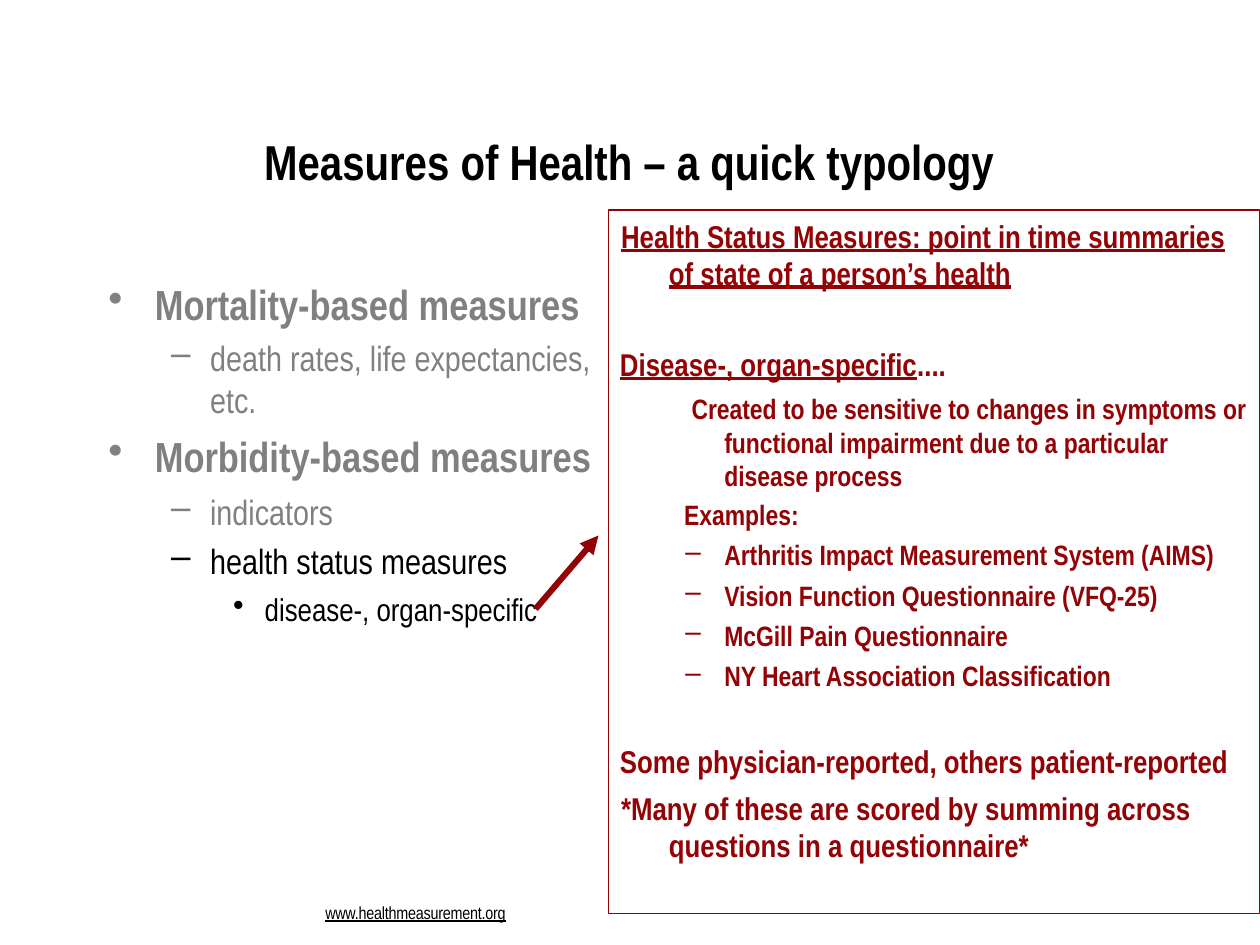
from lxml import etree
from pptx import Presentation
from pptx.dml.color import RGBColor
from pptx.enum import shapes, text
from pptx.oxml import ns
from pptx.util import Pt

RED = RGBColor(0x93, 0x03, 0x06)
GREY = RGBColor(0x80, 0x80, 0x80)
BLACK = RGBColor(0, 0, 0)
FACE = "Arial Narrow"

HEAD = dict(size=24, bold=True, color=GREY, left=28, hang=-26.6, mark="•")
SUB = dict(size=20, color=GREY, left=59.6, hang=-22.3, mark="–", level=1)
LEAF = dict(size=18, color=BLACK, left=90.8, hang=-18, mark="•", level=2)
BODY = dict(size=18, bold=True, color=RED)
WRAP = dict(BODY, left=28, hang=-27.4, line=21)
NOTE = dict(BODY, size=16, left=59.6, hang=-18.7, line=19)
ITEM = dict(BODY, size=16, left=59.6, hang=-22.3, mark="–", before=3.9)


def add_text(slide, box, rows, top=0, wrap=True):
    """Fill a text box with rows of (list of (words, underline), format)."""
    frame = slide.shapes.add_textbox(*map(Pt, box)).text_frame
    edges = dict(margin_left=0, margin_right=0, margin_bottom=0,
                 margin_top=Pt(top), word_wrap=wrap,
                 vertical_anchor=text.MSO_ANCHOR.TOP)
    for name, value in edges.items():
        setattr(frame, name, value)
    for spot, (runs, form) in enumerate(rows):
        para = frame.add_paragraph() if spot else frame.paragraphs[0]
        add_row(para, runs, form)


def add_row(para, runs, form):
    """Write the runs of one paragraph in the given format."""
    props = para._p.get_or_add_pPr()
    props.set("marL", str(Pt(form.get("left", 0))))
    props.set("indent", str(Pt(form.get("hang", 0))))
    if "mark" in form:
        mark = etree.SubElement(props, ns.qn("a:buChar"))
        mark.set("char", form["mark"])
    else:
        etree.SubElement(props, ns.qn("a:buNone"))
    para.level = form.get("level", 0)
    para.space_before = Pt(form.get("before", 0))
    if "line" in form:
        para.line_spacing = Pt(form["line"])
    for words, under in runs:
        run = para.add_run()
        run.text = words
        look = dict(name=FACE, size=Pt(form["size"]),
                    bold=form.get("bold", False), underline=under)
        for name, value in look.items():
            setattr(run.font, name, value)
        run.font.color.rgb = form["color"]
        if "track" in form:
            run._r.get_or_add_rPr().set("spc", str(form["track"]))


def add_title(slide, box):
    """Place the slide title."""
    form = dict(size=28, bold=True, color=BLACK, left=30)
    words = "Measures of Health – a quick typology"
    add_text(slide, box, [([(words, False)], form)], top=5.8)


def add_tree(slide, box):
    """Place the outline of measure types."""
    rows = [
        ("Mortality-based measures", HEAD, {}),
        ("death rates, life expectancies, etc.", SUB, dict(before=4.2)),
        ("Morbidity-based measures", HEAD, dict(before=5.8)),
        ("indicators", SUB, dict(before=5.2)),
        ("health status measures", SUB, dict(before=4.1, color=BLACK)),
        ("disease-, organ-specific", LEAF, dict(before=5.1)),
    ]
    add_text(slide, box, [([(words, False)], {**base, **more})
                          for words, base, more in rows], top=5.8)


def add_panel(slide, box):
    """Place the framed panel on health status measures."""
    left, top, width, height = box
    frame = slide.shapes.add_shape(shapes.MSO_SHAPE.RECTANGLE, *map(Pt, box))
    frame.shadow.inherit = False
    frame.fill.background()
    frame.line.color.rgb = RED
    frame.line.width = Pt(1)
    tests = ["Arthritis Impact Measurement System (AIMS)",
             "Vision Function Questionnaire (VFQ-25)",
             "McGill Pain Questionnaire",
             "NY Heart Association Classification"]
    rows = [
        ([("Health Status Measures: point in time summaries "
           "of state of a person’s health", True)], WRAP),
        ([("Disease-, organ-specific", True), ("....", False)],
         dict(BODY, before=30.7)),
        ([("Created to be sensitive to changes in symptoms or functional "
           "impairment due to a particular disease process", False)],
         dict(NOTE, before=5.2)),
        ([("Examples:", False)],
         dict(BODY, size=16, left=36.7, before=3.1)),
        *[([(test, False)], ITEM) for test in tests],
        ([("Some physician-reported, others patient-reported", False)],
         dict(BODY, before=28.5)),
        ([("*Many of these are scored by summing across "
           "questions in a questionnaire*", False)],
         dict(WRAP, before=5.5)),
    ]
    inner = left + 6.5, top + 2.2, width - 11.5, height - 32
    add_text(slide, inner, rows, top=2.2)


def add_arrow(slide, box):
    """Draw an arrow from the lower left to the upper right of the box."""
    left, top, width, height = box
    ends = left, top + height, left + width, top
    arrow = slide.shapes.add_connector(shapes.MSO_CONNECTOR.STRAIGHT,
                                       *map(Pt, ends))
    arrow.line.color.rgb = RED
    arrow.line.width = Pt(3.5)
    tip = etree.SubElement(arrow.line._get_or_add_ln(), ns.qn("a:tailEnd"))
    tip.set("type", "triangle")
    etree.SubElement(arrow._element.spPr, ns.qn("a:effectLst"))


def add_site(slide, box):
    """Place the web address at the foot."""
    form = dict(size=10, color=BLACK, left=0.9, track=-10)
    add_text(slide, box, [([("www.healthmeasurement.org", True)], form)],
             wrap=False)


def main():
    """Build the slide and save it."""
    deck = Presentation()
    deck.slide_width, deck.slide_height = Pt(720), Pt(540)
    slide = deck.slides.add_slide(deck.slide_layouts[6])
    add_title(slide, (121, 69.1, 477.4, 45.4))
    add_tree(slide, (60.5, 153.4, 280, 206.6))
    add_panel(slide, (347.8, 120.2, 371.9, 401.8))
    add_arrow(slide, (306, 306, 36, 42))
    add_site(slide, (185, 515.5, 108, 13.7))
    deck.save("out.pptx")


if __name__ == "__main__":
    main()
